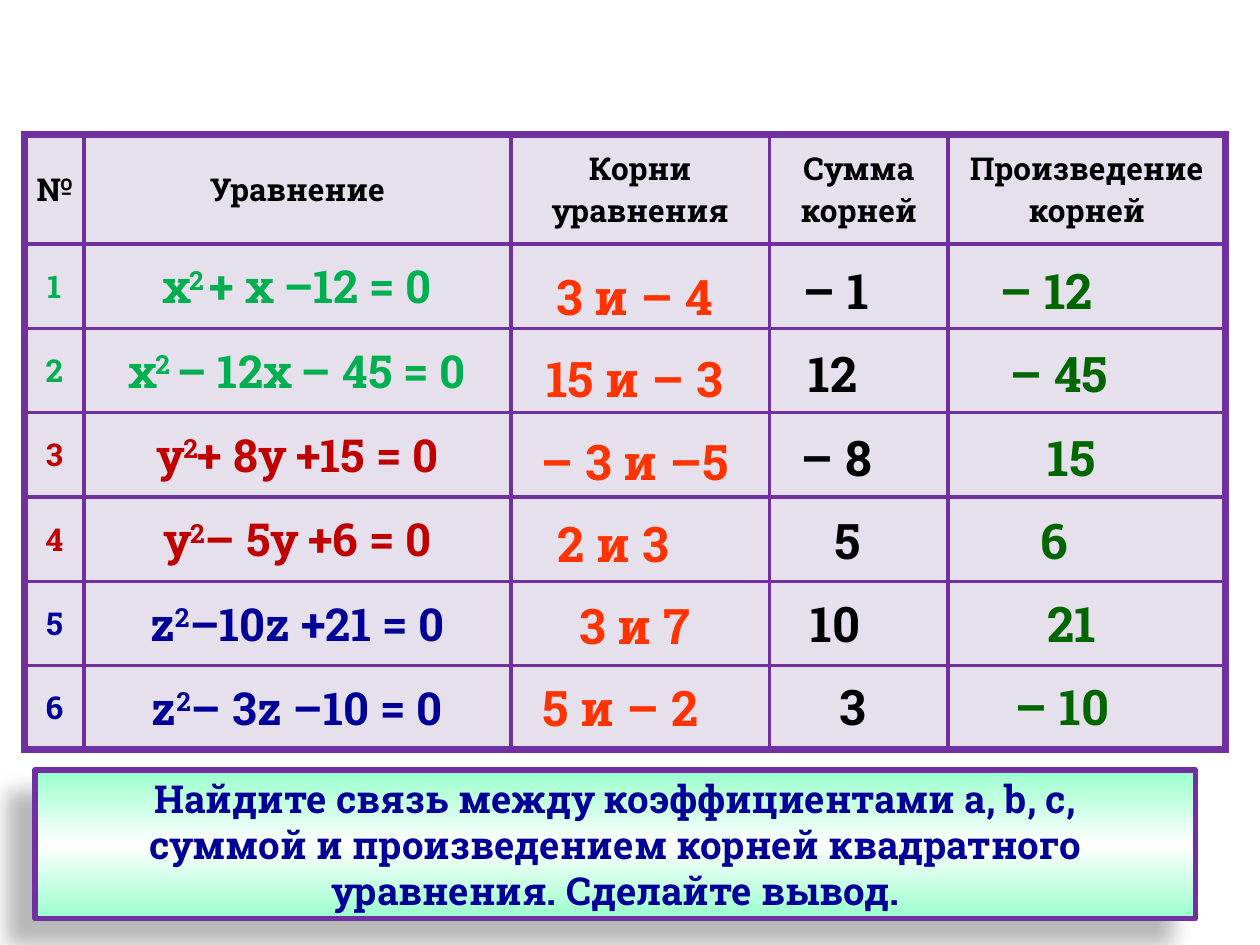
import copy

import lxml.etree
import pptx
import pptx.dml.color
import pptx.enum.shapes
import pptx.enum.text
import pptx.oxml.ns
import pptx.util

Pt = pptx.util.Pt
qn = pptx.oxml.ns.qn
sub = lxml.etree.SubElement
ALIGN = pptx.enum.text.PP_ALIGN
ANCHOR = pptx.enum.text.MSO_ANCHOR
FONT = "Roboto Slab"
COLORS = {
    "black": "000000", "green": "00B050", "red": "C00000", "blue": "000099",
    "orange": "FF3300", "forest": "006600", "purple": "7030A0",
    "lilac": "E6E0EC", "mint": "99FFCC", "white": "FFFFFF",
}

HEADS = ["№", "Уравнение", "Корни уравнения", "Сумма корней", "Произведение корней"]
WIDTHS = [33.8, 244, 147.6, 102.2, 158.4]
HEAD_H, ROW_H = 62.4, 48.2

# Letter, text after the square, colour
TASKS = [
    ("х", "2 ", "+ х –12 = 0", "green"),
    ("х", "2 ", "– 12х – 45 = 0", "green"),
    ("у", "2", "+ 8у +15 = 0", "red"),
    ("у", "2", "– 5у +6 = 0", "red"),
    ("z", "2", "–10z +21 = 0", "blue"),
    ("z", "2", "– 3z –10 = 0", "blue"),
]

# Column centre, first top, step, colour, then (text, width, alignment) by row
LEFT, MID = ALIGN.LEFT, ALIGN.CENTER
ANSWERS = [
    (362.7, 149, 46.9, "orange", [
        ("3 и – 4", 136, MID), ("15 и – 3", 136, MID), ("– 3 и –5", 136, MID),
        ("2 и 3", 102, LEFT), ("3 и 7", 105, MID), ("5 и – 2", 119, LEFT)]),
    (484.6, 145.5, 47.5, "black", [
        ("– 1", 66, LEFT), ("12", 59, LEFT), ("– 8", 68, LEFT),
        ("5", 30, LEFT), ("10", 57, LEFT), ("3", 24, LEFT)]),
    (612.2, 145.5, 47.5, "forest", [
        ("– 12", 96.5, LEFT), ("– 45", 85, LEFT), ("15", 54, MID),
        ("6", 49, LEFT), ("21", 54, MID), ("– 10", 79, LEFT)]),
]

NOTE = [
    "Найдите связь между коэффициентами а, b, с,",
    "суммой и произведением корней квадратного",
    "уравнения. Сделайте вывод.",
]


def rgb(name):
    return pptx.dml.color.RGBColor.from_string(COLORS[name])


def add_run(para, text, size, color, raised=False):
    run = para.add_run()
    run.text = text
    font = run.font
    font.name, font.size, font.bold = FONT, Pt(size), True
    font.color.rgb = rgb(color)
    if raised:
        run._r.get_or_add_rPr().set("baseline", "30000")


def set_edges(cell, edges):
    """Draw the borders; edges maps a tag to a line width in points."""
    props = cell._tc.get_or_add_tcPr()
    for tag, width in edges.items():
        line = sub(props, qn("a:" + tag), w=str(Pt(width)))
        fill = sub(line, qn("a:solidFill"))
        sub(fill, qn("a:srgbClr"), val=COLORS["purple"])


def fill_cell(cell, parts, color):
    cell.vertical_anchor = ANCHOR.MIDDLE
    para = cell.text_frame.paragraphs[0]
    para.alignment = MID
    for text, size, raised in parts:
        add_run(para, text, size, color, raised)


def add_grid(slide):
    rows, cols = len(TASKS) + 1, len(HEADS)
    high = HEAD_H + ROW_H * len(TASKS)
    frame = slide.shapes.add_table(rows, cols, Pt(14.2), Pt(77), Pt(sum(WIDTHS)), Pt(high))
    table = frame.table
    table.first_row = table.horz_banding = False
    for col, width in zip(table.columns, WIDTHS):
        col.width = Pt(width)
    for r, row in enumerate(table.rows):
        row.height = Pt(ROW_H if r else HEAD_H)
        for c, cell in enumerate(row.cells):
            # Thick outer frame, thin inner lines
            outer = {"lnL": c == 0, "lnR": c == cols - 1,
                     "lnT": r == 0, "lnB": r == rows - 1}
            set_edges(cell, {tag: 4.5 if out else 2.25 for tag, out in outer.items()})
            cell.fill.solid()
            cell.fill.fore_color.rgb = rgb("lilac")

    # Heads and equations
    for c, head in enumerate(HEADS):
        fill_cell(table.cell(0, c), [(head, 18, False)], "black")
    for r, (base, power, rest, color) in enumerate(TASKS, 1):
        fill_cell(table.cell(r, 0), [(str(r), 18, False)], color)
        parts = [(base, 26, False), (power, 26, True), (rest, 26, False)]
        fill_cell(table.cell(r, 1), parts, color)


def add_answer(slide, mid, top, width, text, align, color):
    box = slide.shapes.add_textbox(Pt(mid - width / 2), Pt(top), Pt(width), Pt(41))
    frame = box.text_frame
    frame.word_wrap = True
    frame.auto_size = pptx.enum.text.MSO_AUTO_SIZE.SHAPE_TO_FIT_TEXT
    para = frame.paragraphs[0]
    para.alignment = align
    add_run(para, text, 28, color)


def add_shade(shape):
    """Soft shadow towards the lower left."""
    shape.shadow.inherit = False
    effects = shape._element.spPr.find(qn("a:effectLst"))
    shade = sub(effects, qn("a:outerShdw"), blurRad=str(Pt(11.8)), dist=str(Pt(19.7)),
                dir=str(141 * 60000), algn="ctr", rotWithShape="0")
    tint = sub(shade, qn("a:srgbClr"), val=COLORS["black"])
    sub(tint, qn("a:alpha"), val="28000")


def add_note(slide):
    kind = pptx.enum.shapes.MSO_SHAPE.RECTANGLE
    note = slide.shapes.add_shape(kind, Pt(20), Pt(440), Pt(663), Pt(85))
    # Three-stop gradient
    note.fill.gradient()
    note.fill.gradient_angle = 270
    stops = note._element.spPr.find(".//" + qn("a:gsLst"))
    stops.append(copy.deepcopy(stops[0]))
    for i, (stop, name) in enumerate(zip(note.fill.gradient_stops, ["mint", "white", "mint"])):
        stop.position = i / 2
        stop.color.rgb = rgb(name)
    note.line.color.rgb = rgb("purple")
    note.line.width = Pt(3)
    add_shade(note)

    frame = note.text_frame
    frame.word_wrap = False
    frame.vertical_anchor = ANCHOR.MIDDLE
    for i, text in enumerate(NOTE):
        para = frame.add_paragraph() if i else frame.paragraphs[0]
        para.alignment = MID
        add_run(para, text, 22, "blue")


def main():
    deck = pptx.Presentation()
    deck.slide_width, deck.slide_height = Pt(720), Pt(540)
    slide = deck.slides.add_slide(deck.slide_layouts[6])
    add_grid(slide)
    for mid, top, step, color, items in ANSWERS:
        for i, (text, width, align) in enumerate(items):
            add_answer(slide, mid, top + i * step, width, text, align, color)
    add_note(slide)
    deck.save("out.pptx")


if __name__ == "__main__":
    main()
